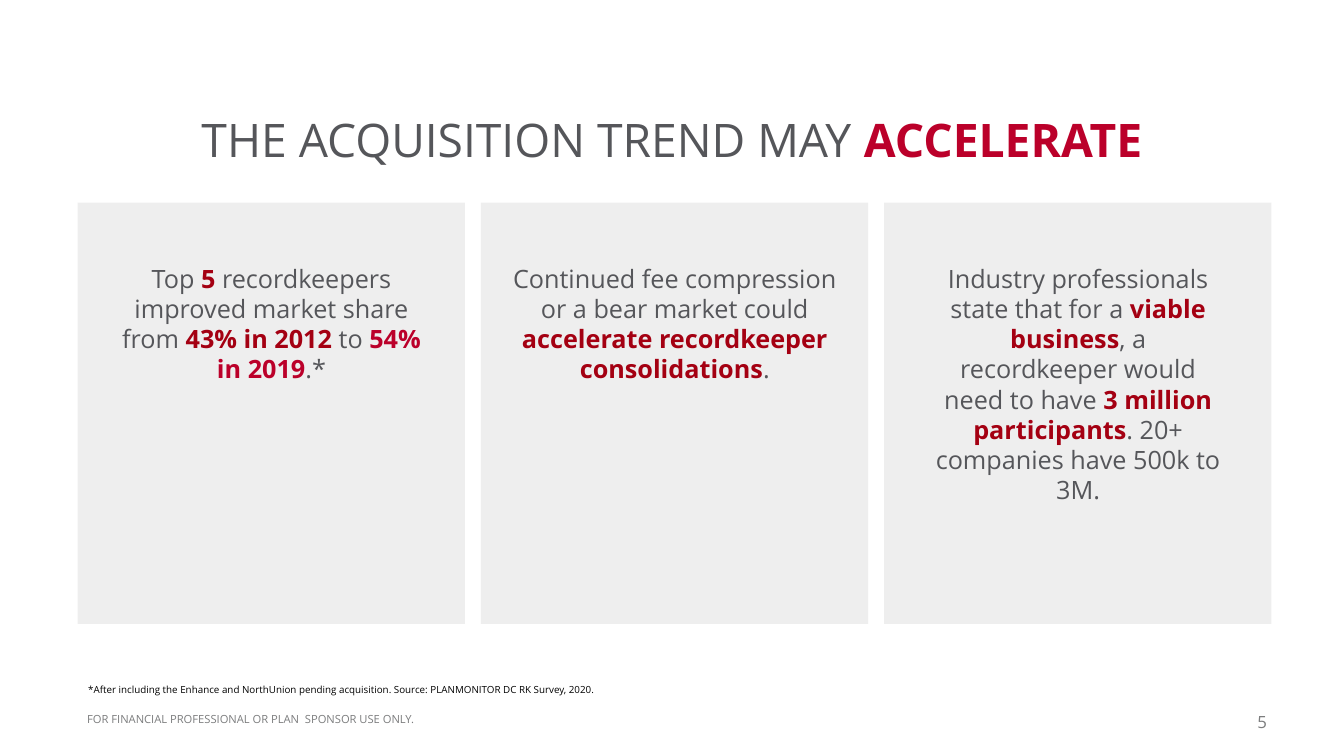
from pptx import Presentation
from pptx.dml.color import RGBColor
from pptx.enum.shapes import MSO_SHAPE
from pptx.enum.text import MSO_ANCHOR, PP_ALIGN
from pptx.util import Inches, Pt

WHITE = RGBColor(0xFF, 0xFF, 0xFF)
BLACK = RGBColor(0x00, 0x00, 0x00)
PANEL_GRAY = RGBColor(0xEE, 0xEE, 0xEE)
TEXT_GRAY = RGBColor(0x55, 0x56, 0x5A)
FOOTER_GRAY = RGBColor(0x7C, 0x7D, 0x7E)
CRIMSON = RGBColor(0xBB, 0x00, 0x2A)
DARK_RED = RGBColor(0xA4, 0x00, 0x12)

presentation = Presentation()
presentation.slide_width = Inches(26.66)
presentation.slide_height = Inches(15)
slide = presentation.slides.add_slide(presentation.slide_layouts[6])
slide.background.fill.solid()
slide.background.fill.fore_color.rgb = WHITE


def add_text(runs, left, top, width, height, size, color=TEXT_GRAY,
             align=PP_ALIGN.LEFT, anchor=MSO_ANCHOR.TOP, line_spacing=1.0,
             space_after=0, margins=(0.1, 0.05, 0.1, 0.05)):
    box = slide.shapes.add_textbox(Inches(left), Inches(top), Inches(width), Inches(height))
    frame = box.text_frame
    frame.word_wrap = True
    frame.vertical_anchor = anchor
    frame.margin_left, frame.margin_top, frame.margin_right, frame.margin_bottom = map(Inches, margins)
    paragraph = frame.paragraphs[0]
    paragraph.alignment = align
    paragraph.line_spacing = line_spacing
    paragraph.space_after = Pt(space_after)
    for text, accent in runs:
        run = paragraph.add_run()
        run.text = text
        run.font.name = "Open Sans"
        run.font.size = Pt(size)
        run.font.bold = accent is not None
        run.font.color.rgb = accent or color


add_text([("THE ACQUISITION TREND MAY ", None), ("ACCELERATE", CRIMSON)],
         0, 2.15, 26.66, 1.21, size=66, align=PP_ALIGN.CENTER)

panels = [
    (2.24, 6.29, 2.52, [
        ("Top ", None), ("5 ", DARK_RED),
        ("recordkeepers improved market share from ", None),
        ("43% in 2012 ", DARK_RED), ("to ", None),
        ("54% in 2019", CRIMSON), (".*", None),
    ]),
    (10.03, 6.71, 2.52, [
        ("Continued fee compression or a bear market could ", None),
        ("accelerate recordkeeper consolidations", DARK_RED), (".", None),
    ]),
    (18.39, 5.99, 4.95, [
        ("Industry professionals state that for a ", None),
        ("viable business", DARK_RED),
        (", a recordkeeper would need to have ", None),
        ("3 million participants", DARK_RED),
        (". 20+ companies have 500k to 3M.", None),
    ]),
]
for index, (text_left, text_width, text_height, runs) in enumerate(panels):
    panel = slide.shapes.add_shape(MSO_SHAPE.RECTANGLE, Inches(1.54 + 8 * index),
                                   Inches(4.02), Inches(7.68), Inches(8.36))
    panel.shadow.inherit = False
    panel.fill.solid()
    panel.fill.fore_color.rgb = PANEL_GRAY
    panel.line.fill.background()
    add_text(runs, text_left, 5.17, text_width, text_height, size=36, align=PP_ALIGN.CENTER)

add_text([("*After including the Enhance and NorthUnion pending acquisition. "
           "Source: PLANMONITOR DC RK Survey, 2020.", None)],
         1.65, 12.86, 10.39, 0.99, size=14, color=BLACK, anchor=MSO_ANCHOR.BOTTOM,
         line_spacing=0.9, space_after=8.5)
add_text([("FOR FINANCIAL PROFESSIONAL OR PLAN  SPONSOR USE ONLY.", None)],
         1.63, 14.09, 12.48, 0.37, size=16, color=FOOTER_GRAY)
add_text([("5", None)], 24.3, 14.09, 0.89, 0.51, size=24, color=FOOTER_GRAY,
         align=PP_ALIGN.RIGHT, line_spacing=0.9, margins=(0, 0.07, 0.06, 0.07))

presentation.save("out.pptx")
